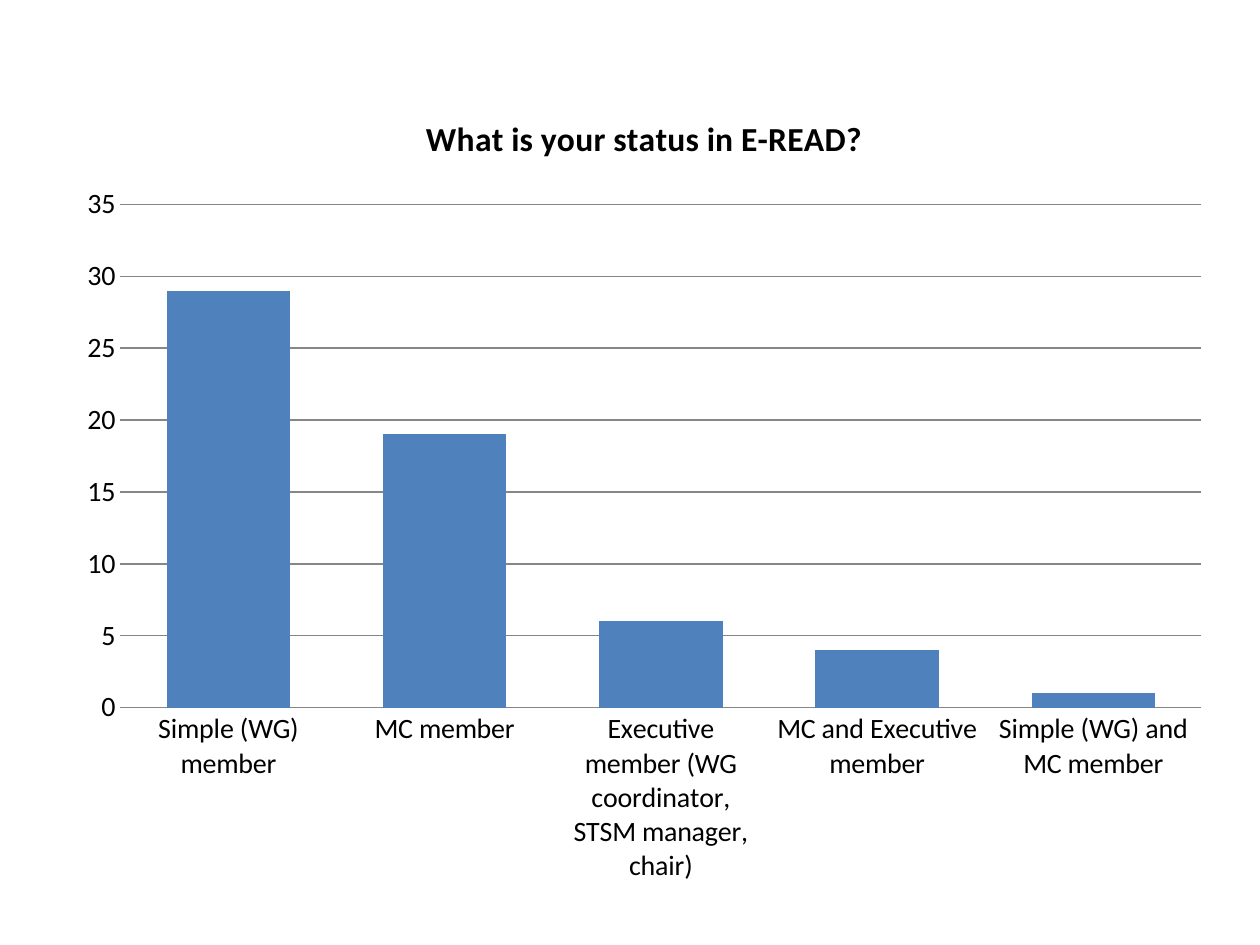
from pptx import Presentation
from pptx import util as u
from pptx.chart.data import CategoryChartData
from pptx.dml.color import RGBColor
from pptx.enum import chart as charts

BLACK = RGBColor(0x00, 0x00, 0x00)
BLUE = RGBColor(0x4F, 0x81, 0xBD)
GREY = RGBColor(0x86, 0x86, 0x86)
FONT = "Calibri"

TITLE = "What is your status in E-READ?"
ANSWERS = {
    "Simple (WG) member": 29,
    "MC member": 19,
    "Executive member (WG coordinator, STSM manager, chair)": 6,
    "MC and Executive member": 4,
    "Simple (WG) and MC member": 1,
}


def format_font(font, size, bold=False):
    font.name = FONT
    font.size = u.Pt(size)
    font.bold = bold
    font.color.rgb = BLACK


def add_status_chart(slide):
    data = CategoryChartData()
    data.categories = list(ANSWERS)
    data.add_series("Series 1", list(ANSWERS.values()))
    frame = slide.shapes.add_chart(
        charts.XL_CHART_TYPE.COLUMN_CLUSTERED,
        u.Pt(36.7), u.Pt(49), u.Pt(663.1), u.Pt(465.1), data)
    chart = frame.chart
    chart.has_legend = False
    format_font(chart.font, 16)
    return chart


def format_title(chart):
    chart.has_title = True
    text_frame = chart.chart_title.text_frame
    text_frame.text = TITLE
    format_font(text_frame.paragraphs[0].runs[0].font, 19.2, bold=True)
    chart.chart_title.include_in_layout = False


def format_columns(chart):
    plot = chart.plots[0]
    plot.gap_width = 75
    plot.overlap = -25
    plot.vary_by_categories = False
    fill = plot.series[0].format.fill
    fill.solid()
    fill.fore_color.rgb = BLUE


def format_line(line):
    line.color.rgb = GREY
    line.width = u.Pt(0.75)


def format_axes(chart):
    for axis in (chart.category_axis, chart.value_axis):
        axis.major_tick_mark = charts.XL_TICK_MARK.NONE
        axis.minor_tick_mark = charts.XL_TICK_MARK.NONE
    format_line(chart.category_axis.format.line)
    value_axis = chart.value_axis
    value_axis.minimum_scale = 0
    value_axis.maximum_scale = 35
    value_axis.major_unit = 5
    value_axis.has_major_gridlines = True
    format_line(value_axis.major_gridlines.format.line)
    value_axis.format.line.fill.background()


def main():
    presentation = Presentation()
    presentation.slide_width = u.Pt(720)
    presentation.slide_height = u.Pt(540)
    slide = presentation.slides.add_slide(presentation.slide_layouts[6])
    chart = add_status_chart(slide)
    format_title(chart)
    format_columns(chart)
    format_axes(chart)
    presentation.save("out.pptx")


if __name__ == "__main__":
    main()
